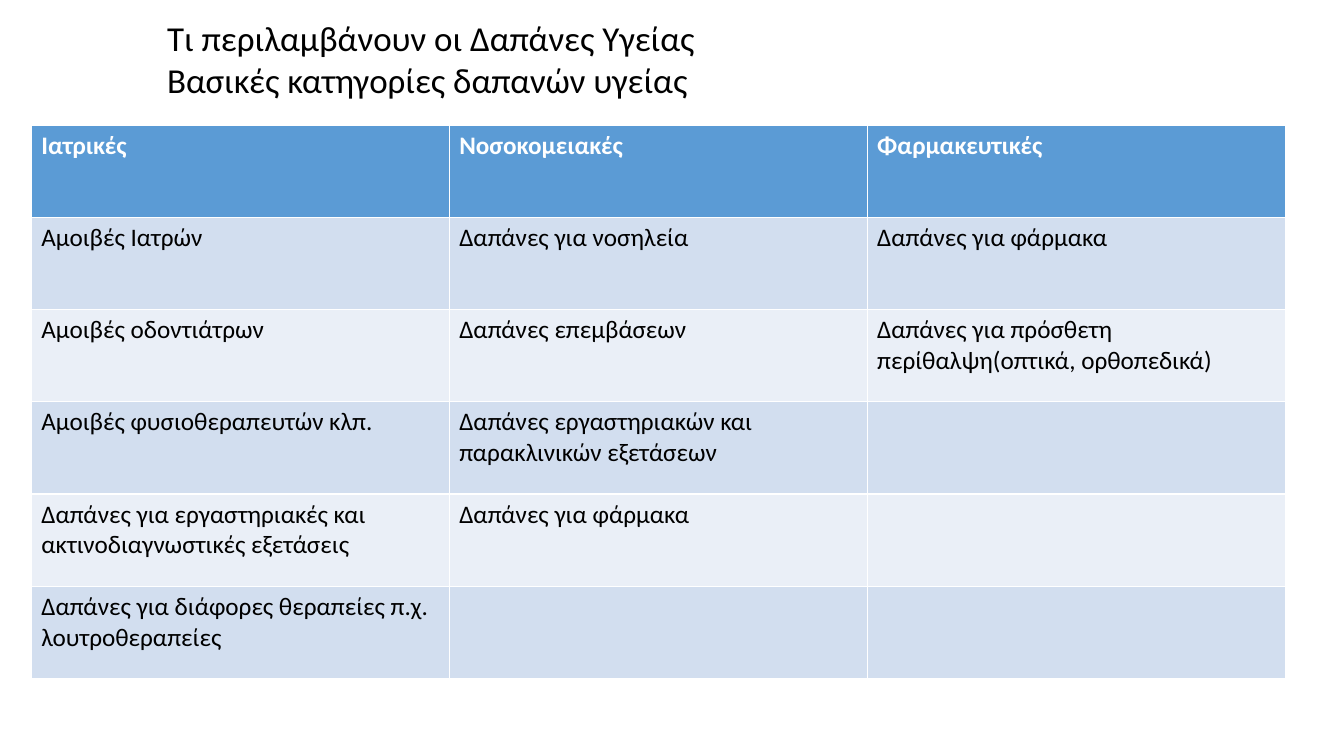
from pptx import Presentation
from pptx.dml.color import RGBColor
from pptx.util import Pt

FONT = "Calibri"
BLACK = RGBColor(0x00, 0x00, 0x00)
WHITE = RGBColor(0xFF, 0xFF, 0xFF)
HEADER_BLUE = RGBColor(0x5B, 0x9B, 0xD5)
BAND_FILLS = (RGBColor(0xD2, 0xDE, 0xEF), RGBColor(0xEA, 0xEF, 0xF7))

TITLE_LINES = (
    "Τι περιλαμβάνουν οι Δαπάνες Υγείας",
    "Βασικές κατηγορίες δαπανών υγείας",
)
EXPENSES = (
    ("Ιατρικές", "Νοσοκομειακές", "Φαρμακευτικές"),
    ("Αμοιβές Ιατρών", "Δαπάνες για νοσηλεία", "Δαπάνες για φάρμακα"),
    ("Αμοιβές οδοντιάτρων", "Δαπάνες επεμβάσεων",
     "Δαπάνες για πρόσθετη περίθαλψη(οπτικά, ορθοπεδικά)"),
    ("Αμοιβές φυσιοθεραπευτών κλπ.",
     "Δαπάνες εργαστηριακών και παρακλινικών εξετάσεων", ""),
    ("Δαπάνες για εργαστηριακές και ακτινοδιαγνωστικές εξετάσεις",
     "Δαπάνες για φάρμακα", ""),
    ("Δαπάνες για διάφορες θεραπείες π.χ. λουτροθεραπείες", "", ""),
)


def add_span(para, text, size, color, bold=False):
    span = para.add_run()
    span.text = text
    span.font.name = FONT
    span.font.size = Pt(size)
    span.font.bold = bold
    span.font.color.rgb = color


def add_title(page):
    box = page.shapes.add_textbox(Pt(112.3), Pt(8.6), Pt(561.6), Pt(67.7))
    frame = box.text_frame
    frame.word_wrap = True
    for index, line in enumerate(TITLE_LINES):
        para = frame.add_paragraph() if index else frame.paragraphs[0]
        add_span(para, line, 25, BLACK)


def fill_cell(cell, text, fill, color, bold):
    cell.fill.solid()
    cell.fill.fore_color.rgb = fill
    if text:
        add_span(cell.text_frame.paragraphs[0], text, 18, color, bold)


def add_expense_table(page):
    """Add the banded table; its default style draws the white borders."""
    table = page.shapes.add_table(
        len(EXPENSES), len(EXPENSES[0]),
        Pt(22.3), Pt(89.4), Pt(895.7), Pt(395.3)).table
    for row_index, texts in enumerate(EXPENSES):
        header = row_index == 0
        fill = HEADER_BLUE if header else BAND_FILLS[(row_index - 1) % 2]
        color = WHITE if header else BLACK
        for column_index, text in enumerate(texts):
            fill_cell(table.cell(row_index, column_index), text, fill, color, header)


def main():
    deck = Presentation()
    deck.slide_width, deck.slide_height = Pt(960), Pt(540)
    page = deck.slides.add_slide(deck.slide_layouts[6])
    add_expense_table(page)
    add_title(page)
    deck.save("out.pptx")


if __name__ == "__main__":
    main()
